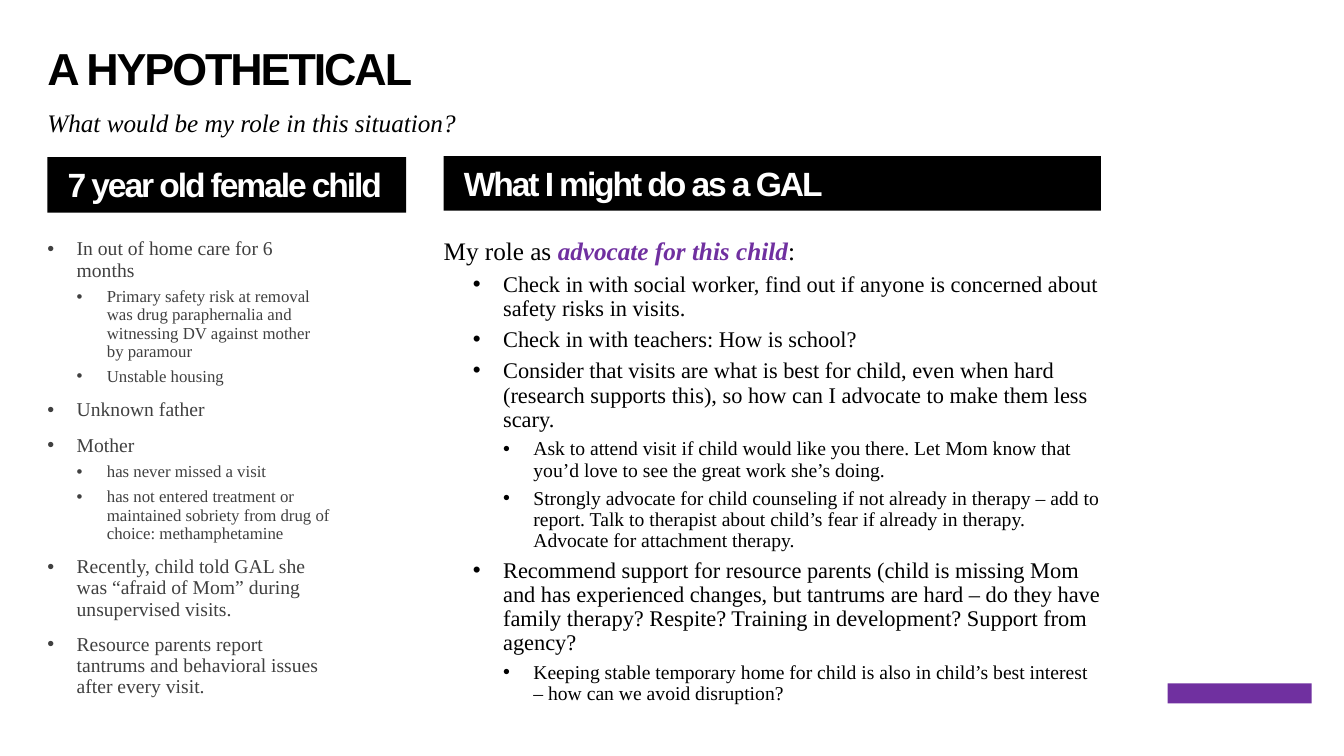
"""Build the slide on the role of a GAL in a hypothetical case."""
from pptx import Presentation
from pptx.dml.color import RGBColor
from pptx.enum.shapes import MSO_SHAPE as Shape
from pptx.enum.text import MSO_ANCHOR as Anchor, PP_ALIGN as Align
from pptx.oxml.ns import qn
from pptx.util import Pt
from lxml.etree import SubElement

PX = 9144
COLORS = {"black": "000000", "white": "FFFFFF", "gray": "404040", "purple": "7030A0"}
SERIF = "Times New Roman"
INDENTS = [29, 59, 89]


def add_box(left, top, width, height, fill=None, anchor=Anchor.TOP, insets=(0, 0)):
    """Add a rectangle that can hold text and return its text frame."""
    place = [value * PX for value in (left, top, width, height)]
    if fill:
        shape = slide.shapes.add_shape(Shape.RECTANGLE, *place)
        shape.shadow.inherit = False
        shape.fill.solid()
        shape.fill.fore_color.rgb = RGBColor.from_string(COLORS[fill])
        shape.line.fill.background()
    else:
        shape = slide.shapes.add_textbox(*place)
    frame = shape.text_frame
    frame.word_wrap = True
    frame.vertical_anchor = anchor
    frame.margin_left, frame.margin_top = [inset * PX for inset in insets]
    frame.margin_right = frame.margin_bottom = 0
    return frame


def add_text(frame, text, size=18, color="black", font=SERIF, bold=False, italic=False,
             spacing=0, level=None, accent=None):
    """Add a paragraph; accent is the part of the text set in bold purple italics."""
    first = not frame.paragraphs[0].runs
    paragraph = frame.paragraphs[0] if first else frame.add_paragraph()
    if level is not None:
        paragraph.level = level
        properties = paragraph._p.get_or_add_pPr()
        properties.set("marL", str(INDENTS[level] * PX))
        properties.set("indent", str(-min(INDENTS[level], 30) * PX))
        SubElement(properties, qn("a:buFont"), typeface="Arial")
        SubElement(properties, qn("a:buChar"), char="•")
    paragraph.alignment = Align.LEFT
    paragraph.line_spacing = 0.9
    paragraph.space_before = Pt(0 if first else 5 if level else 10)
    before, middle, after = text.partition(accent) if accent else (text, "", "")
    for part in filter(None, (before, middle, after)):
        marked = part == accent
        run = paragraph.add_run()
        run.text = part
        run.font.name = font
        run.font.size = Pt(size)
        run.font.bold = bold or marked
        run.font.italic = italic or marked
        run.font.color.rgb = RGBColor.from_string(COLORS["purple" if marked else color])
        if spacing:
            run._r.get_or_add_rPr().set("spc", str(spacing))


presentation = Presentation()
presentation.slide_width, presentation.slide_height = 1333 * PX, 750 * PX
slide = presentation.slides.add_slide(presentation.slide_layouts[6])

title = add_box(47, 47, 1006, 47, anchor=Anchor.MIDDLE)
add_text(title, "A HYPOTHETICAL", size=32, font="Arial", bold=True, spacing=-150)
subtitle = add_box(47, 110, 1006, 39)
add_text(subtitle, "What would be my role in this situation?", italic=True)

for left, top, width, height, heading in [
    (47, 156, 356, 55, "7 year old female child"),
    (440, 155, 652, 54, "What I might do as a GAL"),
]:
    bar = add_box(left, top, width, height, "black", Anchor.MIDDLE, (20, 4))
    add_text(bar, heading, size=24, color="white", font="Arial", bold=True, spacing=-150)

child_facts = [
    (0, "In out of home care for 6 months"),
    (1, "Primary safety risk at removal was drug paraphernalia and witnessing DV "
        "against mother by paramour"),
    (1, "Unstable housing"),
    (0, "Unknown father"),
    (0, "Mother"),
    (1, "has never missed a visit"),
    (1, "has not entered treatment or maintained sobriety from drug of choice: "
        "methamphetamine"),
    (0, "Recently, child told GAL she was “afraid of Mom” during unsupervised visits."),
    (0, "Resource parents report tantrums and behavioral issues after every visit."),
]
facts = add_box(47, 237, 281, 276)
for level, text in child_facts:
    add_text(facts, text, size=14 - 2 * level, color="gray", level=level)

gal_actions = [
    (1, "Check in with social worker, find out if anyone is concerned about safety "
        "risks in visits."),
    (1, "Check in with teachers: How is school?"),
    (1, "Consider that visits are what is best for child, even when hard (research "
        "supports this), so how can I advocate to make them less scary."),
    (2, "Ask to attend visit if child would like you there. Let Mom know that you’d "
        "love to see the great work she’s doing."),
    (2, "Strongly advocate for child counseling if not already in therapy – add to "
        "report. Talk to therapist about child’s fear if already in therapy. "
        "Advocate for attachment therapy."),
    (1, "Recommend support for resource parents (child is missing Mom and has "
        "experienced changes, but tantrums are hard – do they have family therapy? "
        "Respite? Training in development? Support from agency?"),
    (2, "Keeping stable temporary home for child is also in child’s best interest – "
        "how can we avoid disruption?"),
]
actions = add_box(440, 237, 652, 364)
add_text(actions, "My role as advocate for this child:", accent="advocate for this child")
for level, text in gal_actions:
    add_text(actions, text, size=18 - 2 * level, level=level)

add_box(1158, 678, 143, 20, "purple")

presentation.save("out.pptx")
